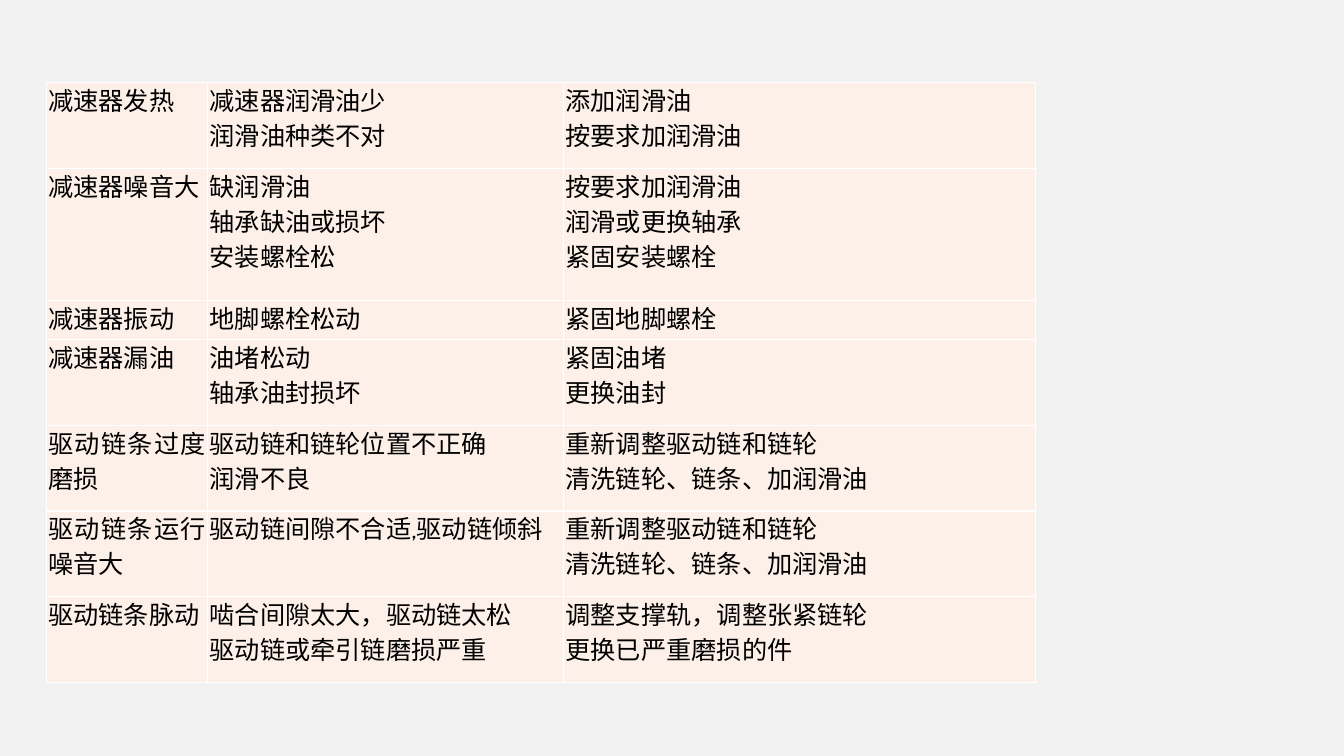
import lxml.etree
import pptx
import pptx.dml.color
import pptx.enum.text
import pptx.oxml.ns
import pptx.util

COLOURS = {"background": "F2F2F2", "cell": "FDF0E8", "border": "FFFFFF", "text": "000000"}
FONT = "Cabin"
SLIDE_WIDTH = pptx.util.Inches(13.33)
SLIDE_HEIGHT = pptx.util.Inches(7.5)

# Table grid, in inches
TABLE_LEFT, TABLE_TOP = 0.46, 0.82
COLUMN_WIDTHS = [1.6, 3.53, 4.68]
ROW_HEIGHTS = {1: 0.39, 2: 0.85, 3: 1.31}  # by lines of text

# Fault, causes, remedies
FAULTS = [
    ("减速器发热", "减速器润滑油少\n润滑油种类不对", "添加润滑油\n按要求加润滑油"),
    ("减速器噪音大", "缺润滑油\n轴承缺油或损坏\n安装螺栓松",
     "按要求加润滑油\n润滑或更换轴承\n紧固安装螺栓"),
    ("减速器振动", "地脚螺栓松动", "紧固地脚螺栓"),
    ("减速器漏油", "油堵松动\n轴承油封损坏", "紧固油堵\n更换油封"),
    ("驱动链条过度磨损", "驱动链和链轮位置不正确\n润滑不良",
     "重新调整驱动链和链轮\n清洗链轮、链条、加润滑油"),
    ("驱动链条运行噪音大", "驱动链间隙不合适,驱动链倾斜",
     "重新调整驱动链和链轮\n清洗链轮、链条、加润滑油"),
    ("驱动链条脉动", "啮合间隙太大，驱动链太松\n驱动链或牵引链磨损严重",
     "调整支撑轨，调整张紧链轮\n更换已严重磨损的件"),
]


def colour(name):
    return pptx.dml.color.RGBColor.from_string(COLOURS[name])


def add_borders(cell):
    properties = cell._tc.get_or_add_tcPr()
    for side in ("lnL", "lnR", "lnT", "lnB"):
        line = lxml.etree.SubElement(properties, pptx.oxml.ns.qn(f"a:{side}"),
                                     w=str(pptx.util.Pt(1)))
        fill = lxml.etree.SubElement(line, pptx.oxml.ns.qn("a:solidFill"))
        lxml.etree.SubElement(fill, pptx.oxml.ns.qn("a:srgbClr"), val=COLOURS["border"])


def fill_cell(cell, text):
    cell.margin_left = cell.margin_right = pptx.util.Inches(0.02)
    cell.margin_top = cell.margin_bottom = 0
    add_borders(cell)
    cell.fill.solid()
    cell.fill.fore_color.rgb = colour("cell")
    cell.text = text
    for para in cell.text_frame.paragraphs:
        para.alignment = pptx.enum.text.PP_ALIGN.JUSTIFY
        para.line_spacing = pptx.util.Pt(25)
        para.font.name = FONT
        para.font.size = pptx.util.Pt(18)
        para.font.color.rgb = colour("text")


def add_fault_table(slide):
    heights = [ROW_HEIGHTS[remedies.count("\n") + 1] for _, _, remedies in FAULTS]
    frame = slide.shapes.add_table(
        len(FAULTS), len(COLUMN_WIDTHS),
        pptx.util.Inches(TABLE_LEFT), pptx.util.Inches(TABLE_TOP),
        pptx.util.Inches(sum(COLUMN_WIDTHS)), pptx.util.Inches(sum(heights)))
    table = frame.table
    table.first_row = table.horz_banding = False
    for column, width in zip(table.columns, COLUMN_WIDTHS):
        column.width = pptx.util.Inches(width)
    for row, height, texts in zip(table.rows, heights, FAULTS):
        row.height = pptx.util.Inches(height)
        for cell, text in zip(row.cells, texts):
            fill_cell(cell, text)


def main():
    deck = pptx.Presentation()
    deck.slide_width = SLIDE_WIDTH
    deck.slide_height = SLIDE_HEIGHT

    # Blank page with a plain background
    page = deck.slides.add_slide(deck.slide_layouts[6])
    page.background.fill.solid()
    page.background.fill.fore_color.rgb = colour("background")

    add_fault_table(page)
    deck.save("out.pptx")


if __name__ == "__main__":
    main()
